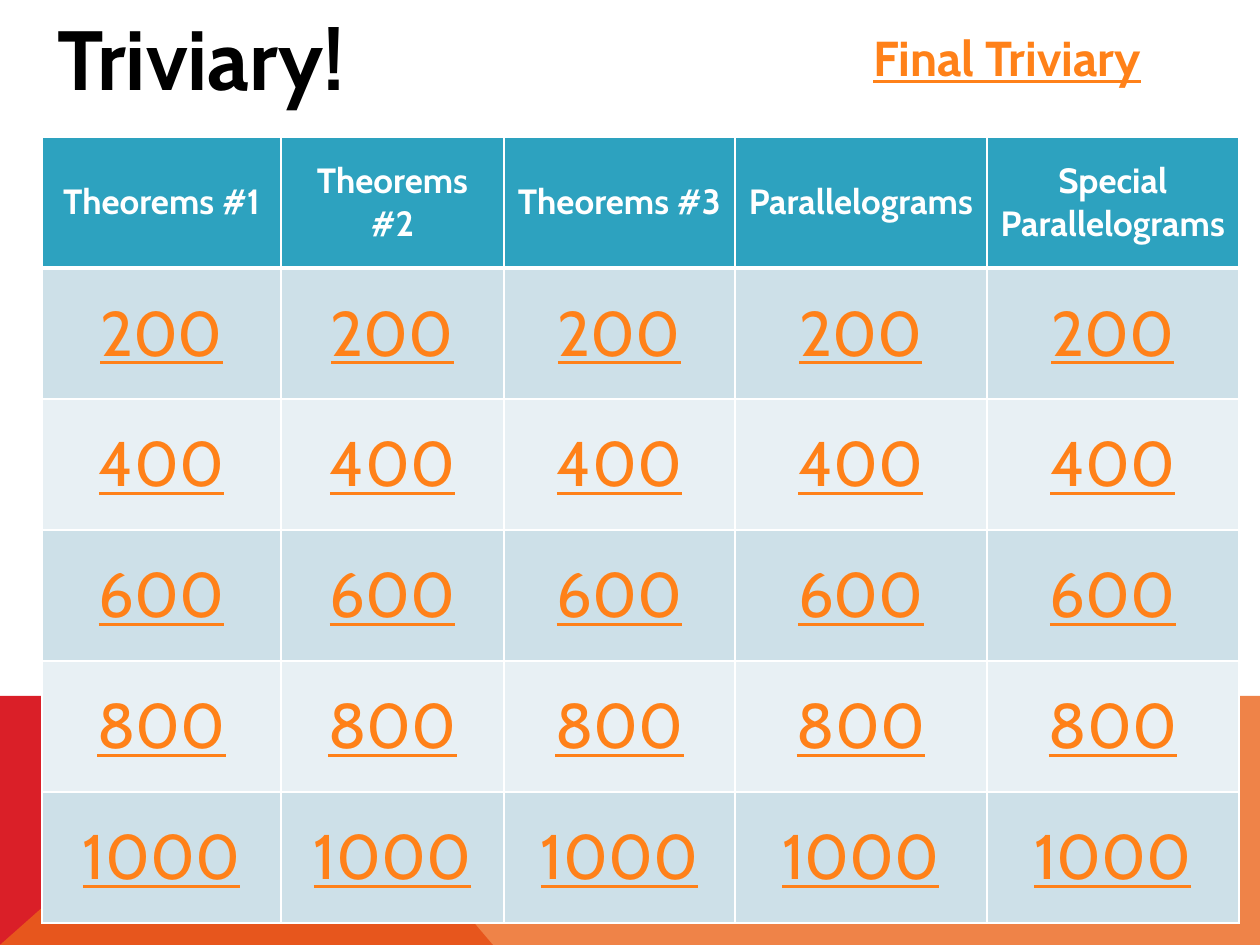
from lxml import etree
from pptx import Presentation
from pptx import util as u
from pptx.dml.color import RGBColor
from pptx.enum import text
from pptx.oxml.ns import qn

PX = 914400 // 126
WIDTH, HEIGHT = 1260, 945
FONT = "Cabin"
WHITE, BLACK, LINK = "FFFFFF", "000000", "FF8119"
HEADER_FILL, BAND_FILLS = "2DA2BF", ("CDE0E8", "E8F0F4")

TITLE = "Triviary!"
FINAL_ROUND = "Final Triviary"
CATEGORIES = ["Theorems #1", "Theorems #2", "Theorems #3",
              "Parallelograms", "Special Parallelograms"]
POINTS = ["200", "400", "600", "800", "1000"]
COLUMN_WIDTHS = [239, 223, 231, 252, 252]
ROW_HEIGHT = 131
BOARD_LEFT, BOARD_TOP = 42, 137

# Corner shapes: outline, fill, opacity in percent
CORNERS = [
    ([(0, 945), (0, 696), (281, 696), (493, 945)], "DA1F28", 100),
    ([(0, 945), (281, 696), (1260, 696), (1260, 945)], "EB641B", 80),
]


def px(length):
    return u.Emu(length * PX)


def color(value):
    return RGBColor.from_string(value)


def paint(target, value):
    target.fill.solid()
    target.fill.fore_color.rgb = color(value)


def write(frame, words, size, ink, bold=False, underline=False,
          align=text.PP_ALIGN.LEFT):
    paragraph = frame.paragraphs[0]
    paragraph.alignment = align
    run = paragraph.add_run()
    run.text = words
    font = run.font
    font.name, font.size, font.bold = FONT, u.Pt(size), bold
    font.underline = underline
    font.color.rgb = color(ink)


def add_corner(slide, points, fill, opacity):
    builder = slide.shapes.build_freeform(*points[0], scale=PX)
    builder.add_line_segments(points[1:], close=True)
    shape = builder.convert_to_shape()
    shape.shadow.inherit = False
    shape.line.fill.background()
    paint(shape, fill)
    if opacity < 100:
        fill_color = shape._element.spPr.find(qn("a:solidFill"))[0]
        etree.SubElement(fill_color, qn("a:alpha"), val=str(opacity * 1000))


def add_borders(cell, top, bottom):
    properties = cell._tc.get_or_add_tcPr()
    for side, points in (("L", 1), ("R", 1), ("T", top), ("B", bottom)):
        line = etree.SubElement(properties, qn(f"a:ln{side}"), w=str(u.Pt(points)))
        fill = etree.SubElement(line, qn("a:solidFill"))
        etree.SubElement(fill, qn("a:srgbClr"), val=WHITE)


def add_board(slide):
    rows = [CATEGORIES] + [[points] * len(CATEGORIES) for points in POINTS]
    table = slide.shapes.add_table(
        len(rows), len(CATEGORIES), px(BOARD_LEFT), px(BOARD_TOP),
        px(sum(COLUMN_WIDTHS)), px(ROW_HEIGHT * len(rows))).table
    for column, width in zip(table.columns, COLUMN_WIDTHS):
        column.width = px(width)
    for r, row in enumerate(rows):
        table.rows[r].height = px(ROW_HEIGHT)
        for c, words in enumerate(row):
            cell = table.cell(r, c)
            cell.vertical_anchor = text.MSO_ANCHOR.MIDDLE
            add_borders(cell, 3 if r == 1 else 1, 3 if r == 0 else 1)
            if r == 0:
                paint(cell, HEADER_FILL)
                write(cell.text_frame, words, 20, WHITE, bold=True,
                      align=text.PP_ALIGN.CENTER)
            else:
                paint(cell, BAND_FILLS[(r - 1) % 2])
                write(cell.text_frame, words, 36, LINK, underline=True,
                      align=text.PP_ALIGN.CENTER)


def main():
    presentation = Presentation()
    presentation.slide_width, presentation.slide_height = px(WIDTH), px(HEIGHT)
    slide = presentation.slides.add_slide(presentation.slide_layouts[5])
    paint(slide.background, WHITE)

    # Decoration and question board
    for corner in CORNERS:
        add_corner(slide, *corner)
    add_board(slide)

    # Title
    title = slide.shapes.title
    title.left, title.top, title.width, title.height = map(px, (45, 0, 462, 115))
    title.text_frame.auto_size = text.MSO_AUTO_SIZE.NONE
    title.text_frame.vertical_anchor = text.MSO_ANCHOR.TOP
    write(title.text_frame, TITLE, 48, BLACK, bold=True)

    # Final round, kept on one line
    final = slide.shapes.add_textbox(*map(px, (861, 21, 346, 72)))
    final.text_frame.word_wrap = True
    write(final.text_frame, FINAL_ROUND, 28, LINK, bold=True, underline=True)

    presentation.save("out.pptx")


if __name__ == "__main__":
    main()
